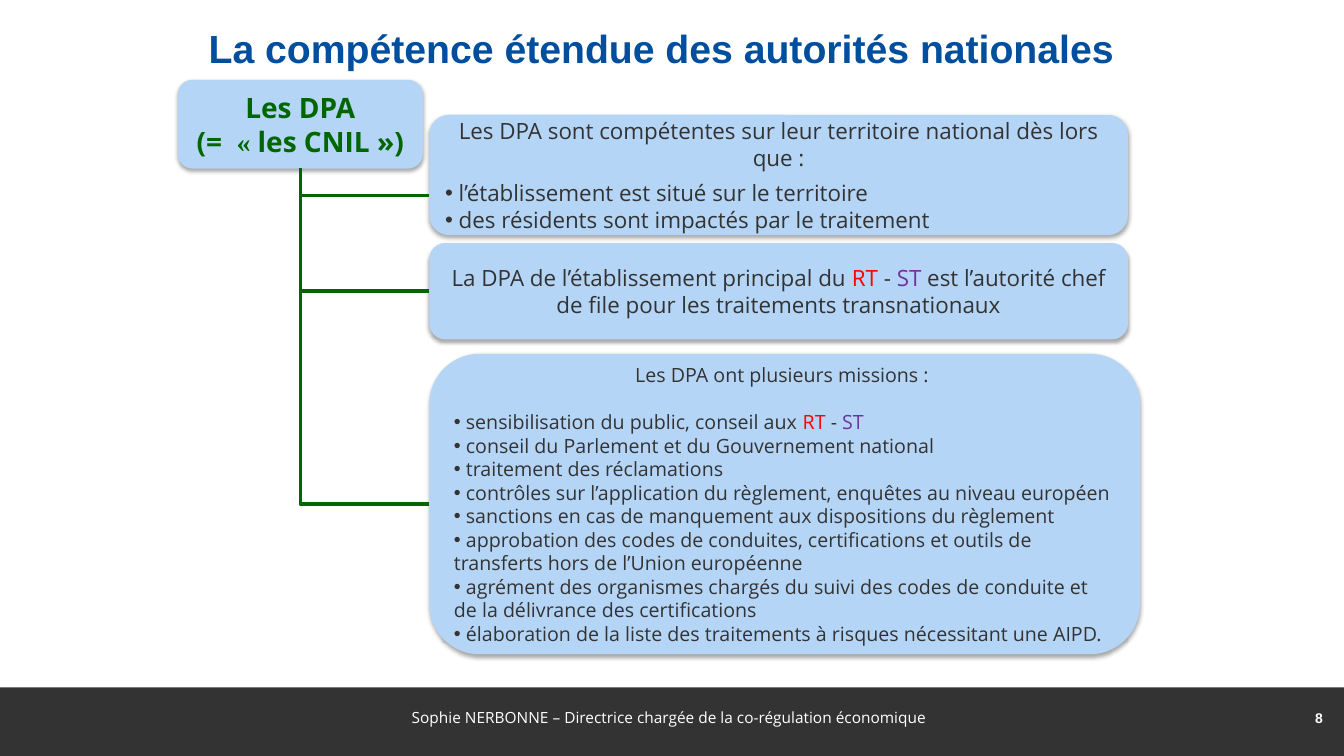
from lxml.etree import SubElement
from pptx import Presentation
from pptx.dml.color import RGBColor
from pptx.enum.shapes import MSO_CONNECTOR as Line, MSO_SHAPE as Shape
from pptx.enum.text import MSO_ANCHOR as Anchor, PP_ALIGN as Align
from pptx.oxml.ns import qn
from pptx.util import Pt

COLORS = {
    "title": "004E9E", "green": "006600", "pale": "B5D5F7", "dark": "333333",
    "white": "FFFFFF", "red": "FF0000", "purple": "7030A0", "black": "000000",
}


def color(name):
    return RGBColor.from_string(COLORS[name])


class Slide:
    """Current page with its house style."""
    body_font = "Open Sans"
    title_font = "Arial"

    def __init__(self, deck):
        self.page = deck.slides.add_slide(deck.slide_layouts[6])

    def shape(self, kind, frame, fill):
        shape = self.page.shapes.add_shape(kind, *map(Pt, frame))
        shape.shadow.inherit = False
        shape.fill.solid()
        shape.fill.fore_color.rgb = color(fill)
        shape.line.fill.background()
        return shape

    def card(self, frame):
        """Rounded box with a soft shadow below it."""
        card = self.shape(Shape.ROUNDED_RECTANGLE, frame, "pale")
        effects = card._element.spPr.find(qn("a:effectLst"))
        shadow = SubElement(effects, qn("a:outerShdw"), blurRad=str(Pt(3.1)),
                            dist=str(Pt(1.8)), dir="5400000", rotWithShape="0")
        tint = SubElement(shadow, qn("a:srgbClr"), val=COLORS["black"])
        SubElement(tint, qn("a:alpha"), val="35000")
        card.text_frame.word_wrap = True
        card.text_frame.vertical_anchor = Anchor.MIDDLE
        return card

    def label(self, frame, text, size, fill, font, bold=False,
              align=Align.LEFT, anchor=Anchor.MIDDLE):
        box = self.page.shapes.add_textbox(*map(Pt, frame))
        box.text_frame.word_wrap = True
        box.text_frame.vertical_anchor = anchor
        self.para(box, [text], size, fill, align, font, bold)

    def para(self, box, spans, size, fill="dark", align=Align.CENTER,
             font=body_font, bold=False, bullet=False, before=0):
        """Add a paragraph; a span is text, or text with a colour and font."""
        frame = box.text_frame
        para = frame.paragraphs[0]
        if para.runs:
            para = frame.add_paragraph()
        para.alignment = align
        if before:
            para.space_before = Pt(before)
        if bullet:
            props = para._p.get_or_add_pPr()
            SubElement(props, qn("a:buFont"), typeface="Arial")
            SubElement(props, qn("a:buChar"), char="•")
        para.font.size = Pt(size)
        para.font.bold = bold
        for span in spans:
            text, tint, face = (span, fill, font) if isinstance(span, str) else span
            run = para.add_run()
            run.text = text
            run.font.name = face
            run.font.color.rgb = color(tint)

    def bullets(self, box, items, size, gap):
        for index, spans in enumerate(items):
            self.para(box, spans, size, align=Align.LEFT, bullet=True,
                      before=0 if index else gap)

    def connector(self, kind, start, end, width):
        line = self.page.shapes.add_connector(kind, *map(Pt, start + end))
        line.line.color.rgb = color("green")
        line.line.width = Pt(width)
        props = line._element.spPr
        SubElement(props, qn("a:effectLst"))
        if kind == Line.ELBOW:  # a single corner
            props.find(qn("a:prstGeom")).set("prst", "bentConnector2")


def main():
    deck = Presentation()
    deck.slide_width, deck.slide_height = Pt(960), Pt(540)
    slide = Slide(deck)
    body, heading = slide.body_font, slide.title_font

    # Footer band and title
    slide.shape(Shape.RECTANGLE, (0, 491, 960, 49), "dark")
    slide.label((142, 11.5, 686, 45.5), "La compétence étendue des autorités nationales",
                28, "title", heading, bold=True)

    # Root of the tree
    root = slide.card((127, 57, 175, 63.4))
    slide.para(root, ["Les DPA"], 20, "green", bold=True)
    slide.para(root, ["(=  ", ("« ", "green", "Times New Roman"), "les CNIL »)"],
               20, "green", bold=True)

    # Branches
    left, wide = 306.7, 499
    actors = [("RT ", "red", body), "- ", ("ST", "purple", body)]

    territory = slide.card((left, 82, wide, 86))
    slide.para(territory, ["Les DPA sont compétentes sur leur territoire national dès lors que :"], 16)
    slide.bullets(territory, [
        [" l’établissement est situé sur le territoire"],
        [" des résidents sont impactés par le traitement"],
    ], 16, gap=6)

    leader = slide.card((left, 173.5, wide, 69))
    slide.para(leader, ["La DPA de l’établissement principal du ", *actors,
                        " est l’autorité chef de file pour les traitements transnationaux"], 16)

    missions = slide.card((left, 252.7, 507.6, 214.6))
    slide.para(missions, ["Les DPA ont plusieurs missions : "], 14)
    slide.bullets(missions, [
        [" sensibilisation du public, conseil aux ", *actors],
        [" conseil du Parlement et du Gouvernement national"],
        [" traitement des réclamations"],
        [" contrôles sur l’application du règlement, enquêtes au niveau européen"],
        [" sanctions en cas de manquement aux dispositions du règlement"],
        [" approbation des codes de conduites, certifications et outils de "
         "transferts hors de l’Union européenne"],
        [" agrément des organismes chargés du suivi des codes de conduite et "
         "de la délivrance des certifications"],
        [" élaboration de la liste des traitements à risques nécessitant une AIPD."],
    ], 14, gap=17)

    # Tree lines
    trunk, top = 214.5, 120.4
    for branch_y in (208, 360):
        slide.connector(Line.ELBOW, (left, branch_y), (trunk, top), 2.5)
    slide.connector(Line.STRAIGHT, (trunk, 139.5), (left, 139.5), 2.25)

    # Footer text
    slide.label((287, 502.5, 385, 25), "Sophie NERBONNE – Directrice chargée de la co-régulation économique",
                11, "white", body, anchor=Anchor.TOP)
    slide.label((922, 498.5, 30, 29), "8", 10, "white", heading, bold=True, align=Align.RIGHT)

    deck.save("out.pptx")


if __name__ == "__main__":
    main()
